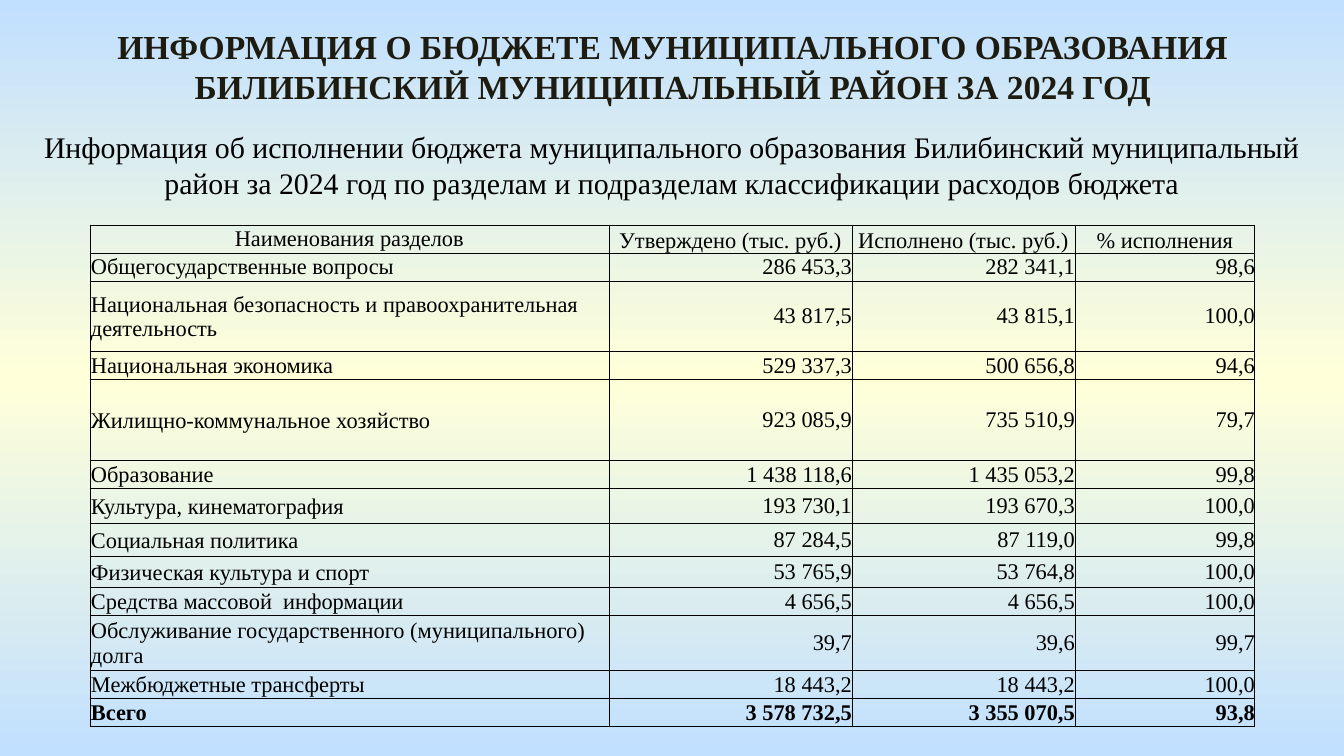
from copy import deepcopy

from lxml import etree
from pptx import Presentation
from pptx import util as u
from pptx.dml.color import RGBColor
from pptx.enum import text
from pptx.oxml.ns import qn

FONT = "Times New Roman"
HUE = {"sky": "C1E0FF", "cream": "FFFFD9", "title": "1E1C11", "ink": "000000"}
ALIGN, ANCHOR = text.PP_ALIGN, text.MSO_ANCHOR

COLS = [519, 243, 223, 180]
HEAD = ["Наименования разделов", "Утверждено (тыс. руб.)",
        "Исполнено (тыс. руб.)", "% исполнения"]
# Row height, then the cells
ROWS = [
    (28, HEAD),
    (28, ["Общегосударственные вопросы", "286 453,3", "282 341,1", "98,6"]),
    (71, ["Национальная безопасность и правоохранительная деятельность",
          "43 817,5", "43 815,1", "100,0"]),
    (28, ["Национальная экономика", "529 337,3", "500 656,8", "94,6"]),
    (81, ["Жилищно-коммунальное хозяйство", "923 085,9", "735 510,9", "79,7"]),
    (28, ["Образование", "1 438 118,6", "1 435 053,2", "99,8"]),
    (35, ["Культура, кинематография", "193 730,1", "193 670,3", "100,0"]),
    (33, ["Социальная политика", "87 284,5", "87 119,0", "99,8"]),
    (31, ["Физическая культура и спорт", "53 765,9", "53 764,8", "100,0"]),
    (28, ["Средства массовой  информации", "4 656,5", "4 656,5", "100,0"]),
    (55, ["Обслуживание государственного (муниципального) долга",
          "39,7", "39,6", "99,7"]),
    (28, ["Межбюджетные трансферты", "18 443,2", "18 443,2", "100,0"]),
    (28, ["Всего", "3 578 732,5", "3 355 070,5", "93,8"]),
]


def px(n):
    return u.Emu(round(n * 914400 / 134.4))


def rgb(name):
    return RGBColor.from_string(HUE[name])


def add_run(para, words, size, hue="ink", bold=False):
    run = para.add_run()
    run.text = words
    font = run.font
    font.name, font.size, font.bold = FONT, u.Pt(size), bold
    font.color.rgb = rgb(hue)


def paint_back(slide):
    fill = slide.background.fill
    fill.gradient()
    fill.gradient_angle = 270
    stops = fill._fill._gradFill.find(qn("a:gsLst"))
    stops.insert(1, deepcopy(stops[0]))
    for stop, name, pos in zip(fill.gradient_stops,
                               ["sky", "cream", "sky"], [0, 0.5, 1]):
        stop.color.rgb = rgb(name)
        stop.position = pos


def add_text(slide, box, lines, size, hue="ink", bold=False):
    frame = slide.shapes.add_textbox(*map(px, box)).text_frame
    frame.word_wrap = True
    frame.auto_size = text.MSO_AUTO_SIZE.SHAPE_TO_FIT_TEXT
    for i, line in enumerate(lines):
        para = frame.add_paragraph() if i else frame.paragraphs[0]
        para.alignment = ALIGN.CENTER
        add_run(para, line, size, hue, bold)


def add_edges(cell):
    props = cell._tc.get_or_add_tcPr()
    for side in ("lnL", "lnR", "lnT", "lnB"):
        line = etree.SubElement(props, qn("a:" + side), w=str(u.Pt(0.5)))
        fill = etree.SubElement(line, qn("a:solidFill"))
        etree.SubElement(fill, qn("a:srgbClr"), val=HUE["ink"])


def fill_cell(cell, words, head, first, bold):
    add_edges(cell)
    cell.fill.background()
    inset = px(1) if head or first else 0
    cell.margin_left = cell.margin_right = cell.margin_top = inset
    cell.margin_bottom = 0
    cell.vertical_anchor = ANCHOR.BOTTOM if head and not first else ANCHOR.MIDDLE
    para = cell.text_frame.paragraphs[0]
    if head:
        para.alignment = ALIGN.CENTER
    else:
        para.alignment = ALIGN.LEFT if first else ALIGN.RIGHT
    add_run(para, words, 12, bold=bold)


def add_budget(slide, left, top):
    high = sum(h for h, _ in ROWS)
    box = map(px, (left, top, sum(COLS), high))
    table = slide.shapes.add_table(len(ROWS), len(COLS), *box).table
    table.first_row = table.horz_banding = False
    for col, wide in zip(table.columns, COLS):
        col.width = px(wide)
    for r, (tall, cells) in enumerate(ROWS):
        table.rows[r].height = px(tall)
        for c, words in enumerate(cells):
            fill_cell(table.cell(r, c), words, r == 0, c == 0,
                      r == len(ROWS) - 1)


def main():
    deck = Presentation()
    deck.slide_width, deck.slide_height = px(1344), px(756)
    slide = deck.slides.add_slide(deck.slide_layouts[6])
    paint_back(slide)
    add_text(slide, (38, 19, 1270, 95),
             ["ИНФОРМАЦИЯ О БЮДЖЕТЕ МУНИЦИПАЛЬНОГО ОБРАЗОВАНИЯ",
              "БИЛИБИНСКИЙ МУНИЦИПАЛЬНЫЙ РАЙОН ЗА 2024 ГОД"],
             18, "title", True)
    add_text(slide, (0, 122, 1344, 86),
             ["Информация об исполнении бюджета муниципального образования "
              "Билибинский муниципальный район за 2024 год по разделам и "
              "подразделам классификации расходов бюджета"], 16)
    add_budget(slide, 90, 225)
    deck.save("out.pptx")


if __name__ == "__main__":
    main()
